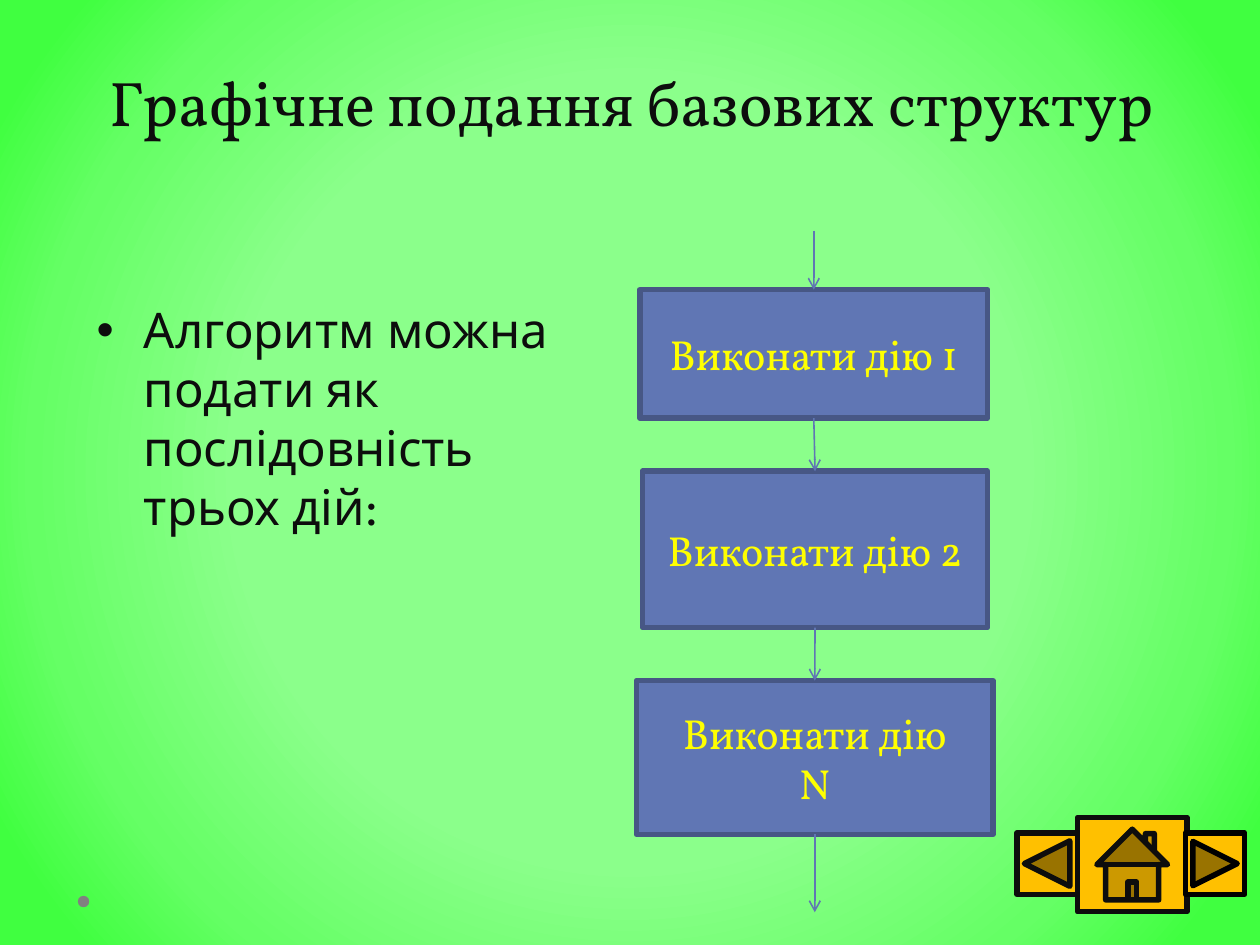
from typing import NamedTuple

import pptx
import pptx.dml.color
import pptx.enum.shapes
import pptx.enum.text
import pptx.oxml
import pptx.oxml.ns
import pptx.util
from lxml import etree

Cm, Pt = pptx.util.Cm, pptx.util.Pt
RGBColor = pptx.dml.color.RGBColor
MSO = pptx.enum.shapes.MSO_SHAPE
ANCHOR = pptx.enum.text.MSO_ANCHOR
ALIGN = pptx.enum.text.PP_ALIGN
qn = pptx.oxml.ns.qn

INK = RGBColor(0x0D, 0x0D, 0x0D)
BLACK = RGBColor(0x00, 0x00, 0x00)
GREY = RGBColor(0x80, 0x80, 0x80)
BLUE = RGBColor(0x60, 0x76, 0xB4)
DARK_BLUE = RGBColor(0x47, 0x57, 0x85)
YELLOW = RGBColor(0xFF, 0xFF, 0x00)
GOLD = RGBColor(0xFF, 0xC0, 0x00)
BACKGROUND_STOPS = [
    (50, RGBColor(0x8B, 0xFF, 0x8B)),
    (76, RGBColor(0x65, 0xFF, 0x65)),
    (92, RGBColor(0x40, 0xFF, 0x40)),
]
SERIF, SANS = "Vollkorn", "League Spartan"
TOP, BOTTOM = 0, 2  # connection sites of a rectangle


class Box(NamedTuple):
    """Position and size in centimetres."""
    left: float
    top: float
    width: float
    height: float


class Step(NamedTuple):
    box: Box
    lines: list[str]


class Button(NamedTuple):
    kind: MSO
    box: Box
    line: RGBColor


STEPS = [
    Step(Box(12.9, 5.84, 7.01, 2.59), ["Виконати дію 1"]),
    Step(Box(12.95, 9.5, 6.96, 3.15), ["Виконати дію 2"]),
    Step(Box(12.83, 13.72, 7.19, 3.1), ["Виконати дію", "N"]),
]
BUTTONS = [
    Button(MSO.ACTION_BUTTON_HOME, Box(21.72, 16.48, 2.21, 1.9), INK),
    Button(MSO.ACTION_BUTTON_BACK_OR_PREVIOUS, Box(20.5, 16.79, 1.22, 1.24), INK),
    Button(MSO.ACTION_BUTTON_FORWARD_OR_NEXT, Box(23.9, 16.79, 1.19, 1.24), BLACK),
]


def paint_background(s) -> None:
    fill = s.background.fill
    fill.gradient()
    grad = s.element.find(".//" + qn("a:gradFill"))
    for child in list(grad):
        grad.remove(child)
    stops = etree.SubElement(grad, qn("a:gsLst"))
    for position, color in BACKGROUND_STOPS:
        stop = etree.SubElement(stops, qn("a:gs"), pos=str(position * 1000))
        etree.SubElement(stop, qn("a:srgbClr"), val=str(color))
    radial = etree.SubElement(grad, qn("a:path"), path="circle")
    etree.SubElement(radial, qn("a:fillToRect"), l="50000", t="50000", r="50000", b="50000")


def add_run(p, text: str, size: float, font: str, color: RGBColor) -> None:
    r = p.add_run()
    r.text = text
    r.font.size = Pt(size)
    r.font.name = font
    r.font.color.rgb = color


def add_text(s, box: Box, anchor: ANCHOR):
    tf = s.shapes.add_textbox(*map(Cm, box)).text_frame
    tf.word_wrap = True
    tf.vertical_anchor = anchor
    return tf.paragraphs[0]


def add_shape(s, kind: MSO, box: Box, fill: RGBColor, line: RGBColor | None = None):
    sp = s.shapes.add_shape(kind, *map(Cm, box))
    sp.shadow.inherit = False
    sp.fill.solid()
    sp.fill.fore_color.rgb = fill
    if line is None:
        sp.line.fill.background()
    else:
        sp.line.color.rgb = line
        sp.line.width = Pt(3.15)
    return sp


def add_step(s, step: Step):
    sp = add_shape(s, MSO.RECTANGLE, step.box, BLUE, DARK_BLUE)
    tf = sp.text_frame
    tf.word_wrap = True
    tf.vertical_anchor = ANCHOR.MIDDLE
    for i, line in enumerate(step.lines):
        p = tf.add_paragraph() if i else tf.paragraphs[0]
        p.alignment = ALIGN.CENTER
        add_run(p, line, 24, SERIF, YELLOW)
    return sp


def add_arrow(s, x: int, start: int, end: int, source=None, target=None) -> None:
    cx = s.shapes.add_connector(pptx.enum.shapes.MSO_CONNECTOR.STRAIGHT, x, start, x, end)
    if source is not None:
        cx.begin_connect(source, BOTTOM)
    if target is not None:
        cx.end_connect(target, TOP)
    cx.line.color.rgb = BLUE
    cx.line.width = Pt(0.9)
    etree.SubElement(cx.line._get_or_add_ln(), qn("a:tailEnd"), type="arrow")
    etree.SubElement(cx.element.spPr, qn("a:effectLst"))


def main() -> None:
    prs = pptx.Presentation()
    prs.slide_width, prs.slide_height = Cm(25.4), Cm(19.05)
    s = prs.slides.add_slide(prs.slide_layouts[6])
    paint_background(s)

    # Footer dot
    add_shape(s, MSO.OVAL, Box(1.57, 18.06, 0.23, 0.23), GREY)

    # Title
    p = add_text(s, Box(1.3, 0.33, 22.86, 2.59), ANCHOR.BOTTOM)
    p.alignment = ALIGN.CENTER
    p.line_spacing = Pt(58)
    add_run(p, "Графічне подання базових структур", 36, SERIF, INK)

    # Bulleted statement
    p = add_text(s, Box(1.7, 5.92, 10.01, 7.67), ANCHOR.TOP)
    pPr = p._p.get_or_add_pPr()
    pPr.set("marL", str(Cm(0.95)))
    pPr.set("indent", str(-Cm(0.95)))
    etree.SubElement(pPr, qn("a:buFont"), typeface="Arial")
    etree.SubElement(pPr, qn("a:buChar"), char="•")
    add_run(p, "Алгоритм можна подати як послідовність трьох дій:", 28, SANS, INK)

    # Flowchart: steps, then the arrows into, between and out of them
    steps = [add_step(s, step) for step in STEPS]
    for source, target in zip([None, *steps], [*steps, None]):
        near = source or target
        x = near.left + near.width // 2
        start = source.top + source.height if source else Cm(4.65)
        end = target.top if target else Cm(18.39)
        add_arrow(s, x, start, end, source, target)

    # Navigation buttons
    for button in BUTTONS:
        add_shape(s, button.kind, button.box, GOLD, button.line)

    prs.save("out.pptx")


if __name__ == "__main__":
    main()
